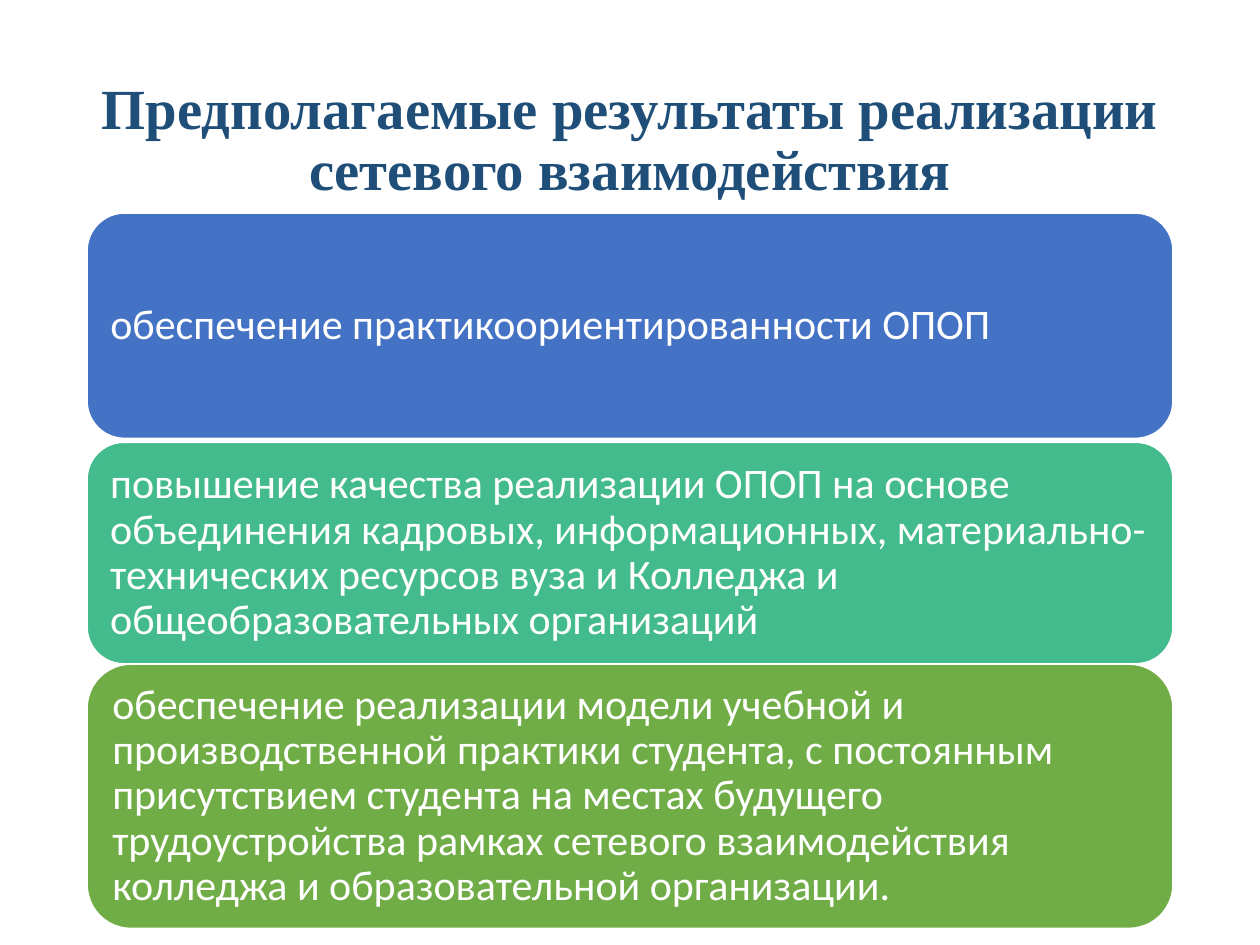
from dataclasses import dataclass

from pptx import Presentation
from pptx.dml.color import RGBColor
from pptx.enum import shapes, text
from pptx.util import Inches, Pt

COLORS = {
    "title": "1F4E79",
    "white": "FFFFFF",
    "blue": "4472C4",
    "teal": "43BB8D",
    "green": "70AD47",
}
LEFT, WIDTH = 0.69, 8.62


@dataclass
class ResultCard:
    top: float
    height: float
    color: str
    wording: str


CARDS = [
    ResultCard(1.69, 1.79, "blue", "обеспечение практикоориентированности ОПОП"),
    ResultCard(
        3.51, 1.76, "teal",
        "повышение качества реализации ОПОП на основе объединения кадровых, "
        "информационных, материально-технических ресурсов вуза и Колледжа и "
        "общеобразовательных организаций",
    ),
    ResultCard(
        5.27, 2.1, "green",
        "обеспечение реализации модели учебной и производственной практики "
        "студента, с постоянным присутствием студента на местах будущего "
        "трудоустройства рамках сетевого взаимодействия колледжа и "
        "образовательной организации.",
    ),
]


def rgb(name: str) -> RGBColor:
    return RGBColor.from_string(COLORS[name])


def write_text(shape, wording: str, *, font: str, size: float, color: str,
               bold: bool = False, align=text.PP_ALIGN.LEFT,
               vertical_inset: float = 0.1) -> None:
    frame = shape.text_frame
    frame.word_wrap = True
    frame.vertical_anchor = text.MSO_ANCHOR.MIDDLE
    frame.margin_left = frame.margin_right = Inches(0.1)
    frame.margin_top = frame.margin_bottom = Inches(vertical_inset)
    paragraph = frame.paragraphs[0]
    paragraph.alignment = align
    paragraph.line_spacing = 0.9
    run = paragraph.add_run()
    run.text = wording
    run.font.name = font
    run.font.size = Pt(size)
    run.font.bold = bold
    run.font.color.rgb = rgb(color)


def draw_card(slide, card: ResultCard) -> None:
    shape = slide.shapes.add_shape(
        shapes.MSO_SHAPE.ROUNDED_RECTANGLE,
        Inches(LEFT), Inches(card.top), Inches(WIDTH), Inches(card.height))
    shape.shadow.inherit = False
    shape.fill.solid()
    shape.fill.fore_color.rgb = rgb(card.color)
    shape.line.color.rgb = rgb("white")
    shape.line.width = Pt(1)
    write_text(shape, card.wording, font="Calibri", size=24, color="white")


def main() -> None:
    presentation = Presentation()
    presentation.slide_width = Inches(10)
    presentation.slide_height = Inches(7.5)
    slide = presentation.slides.add_slide(presentation.slide_layouts[6])
    for card in CARDS:
        draw_card(slide, card)
    title = slide.shapes.add_textbox(
        Inches(LEFT), Inches(0.4), Inches(WIDTH), Inches(1.45))
    write_text(title, "Предполагаемые результаты реализации сетевого взаимодействия",
               font="Times New Roman", size=32.4, color="title", bold=True,
               align=text.PP_ALIGN.CENTER, vertical_inset=0.05)
    presentation.save("out.pptx")


if __name__ == "__main__":
    main()
